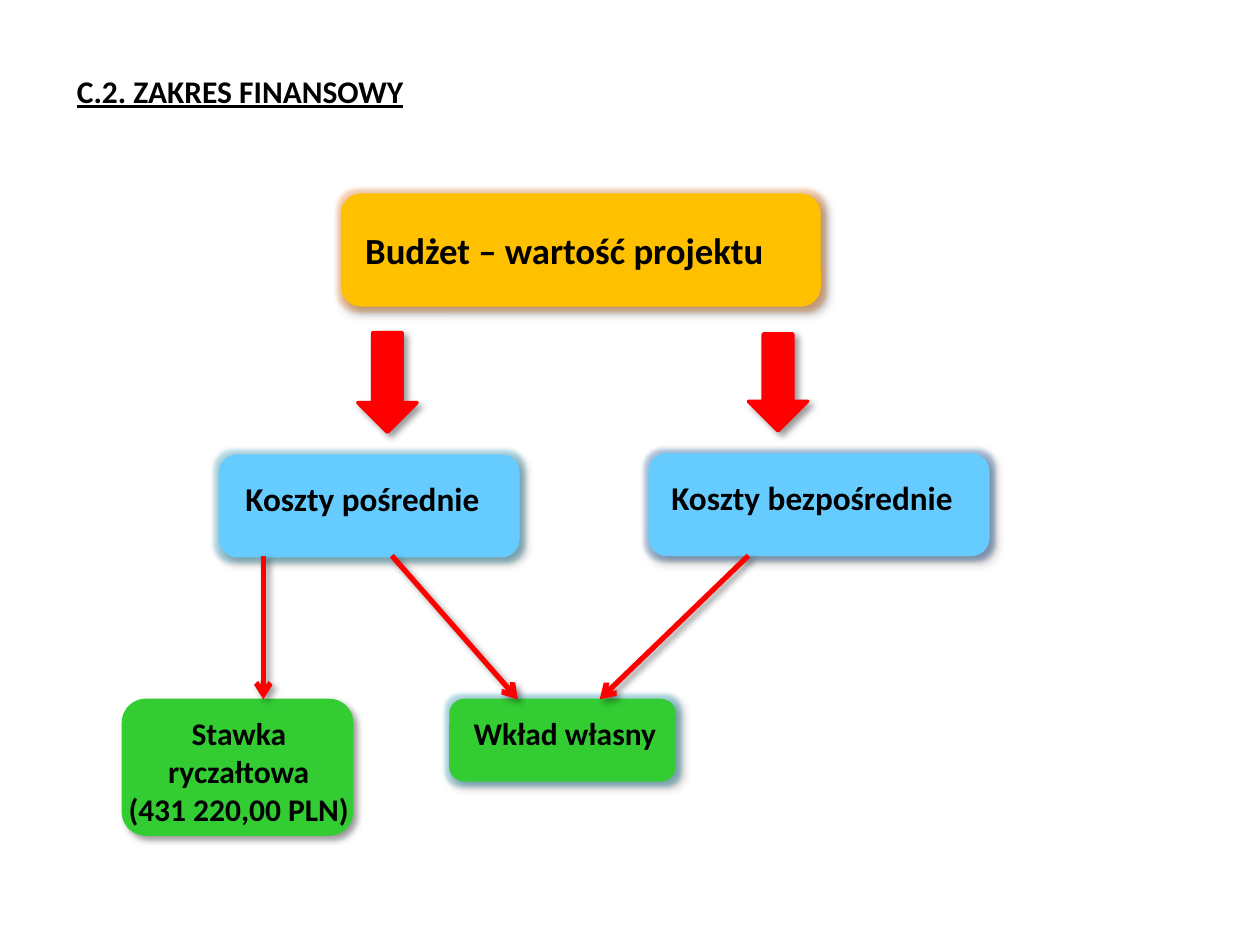
import dataclasses
import typing

import lxml.etree
import pptx
import pptx.dml.color
import pptx.enum.shapes
import pptx.enum.text
import pptx.oxml.ns
import pptx.util

RGBColor = pptx.dml.color.RGBColor
Shapes = pptx.enum.shapes.MSO_SHAPE
Align = pptx.enum.text.PP_ALIGN

BLACK = RGBColor(0, 0, 0)
AMBER = RGBColor(0xFF, 0xC0, 0x00)
SKY = RGBColor(0x66, 0xCC, 0xFF)
GREEN = RGBColor(0x33, 0xCC, 0x33)
RED = RGBColor(0xFF, 0, 0)
ORANGE_GLOW = RGBColor(0xF7, 0x96, 0x46)
TEAL_GLOW = RGBColor(0x4B, 0xAC, 0xC6)
BLUE_GLOW = RGBColor(0x4F, 0x81, 0xBD)

COLUMNS, ROWS = 100, 75
SLIDE_WIDTH, SLIDE_HEIGHT = pptx.util.Inches(10), pptx.util.Inches(7.5)


@dataclasses.dataclass(frozen=True)
class Area:
    column: float
    row: float
    columns: float
    rows: float

    def lengths(self) -> tuple[int, int, int, int]:
        return (across(self.column), down(self.row),
                across(self.columns), down(self.rows))


@dataclasses.dataclass(frozen=True)
class Block:
    kind: Shapes
    area: Area
    color: RGBColor
    glow: typing.Optional[RGBColor] = None


@dataclasses.dataclass(frozen=True)
class Arrow:
    start_column: float
    end_column: float


@dataclasses.dataclass(frozen=True)
class Label:
    area: Area
    lines: tuple[str, ...]
    size: int
    alignment: Align = Align.LEFT


BLOCKS = (
    Block(Shapes.ROUNDED_RECTANGLE, Area(27.2, 15.5, 37.8, 8.7), AMBER, ORANGE_GLOW),
    Block(Shapes.ROUNDED_RECTANGLE, Area(17.5, 36.2, 23.6, 7.9), SKY, TEAL_GLOW),
    Block(Shapes.ROUNDED_RECTANGLE, Area(51.6, 36.1, 26.8, 7.9), SKY, BLUE_GLOW),
    Block(Shapes.ROUNDED_RECTANGLE, Area(35.8, 55.6, 17.7, 6.3), GREEN, TEAL_GLOW),
    Block(Shapes.ROUNDED_RECTANGLE, Area(9.8, 55.6, 18.1, 10.6), GREEN),
    Block(Shapes.DOWN_ARROW, Area(28.4, 26.4, 4.7, 7.9), RED),
    Block(Shapes.DOWN_ARROW, Area(59.4, 26.5, 4.7, 7.7), RED),
)
ARROW_TOP, ARROW_BOTTOM = 44.1, 55.5
ARROWS = (Arrow(31.1, 41.1), Arrow(59.4, 47.6), Arrow(20.9, 20.9))
TITLE = Label(Area(5.1, 5.2, 28.2, 4), ("C.2. ZAKRES FINANSOWY",), 18)
LABELS = (
    Label(Area(28, 17.6, 36.2, 4.5), ("Budżet – wartość projektu",), 21),
    Label(Area(18.5, 37.5, 22, 4.2), ("Koszty pośrednie",), 19),
    Label(Area(52.3, 37.4, 25.2, 4.2), ("Koszty bezpośrednie",), 19),
    Label(Area(8.4, 56.2, 21.1, 10.1),
          ("Stawka ryczałtowa", "(431 220,00 PLN)"), 18, Align.CENTER),
    Label(Area(36.6, 56.2, 16.9, 4), ("Wkład własny",), 18),
)


def across(columns: float) -> int:
    return round(SLIDE_WIDTH * columns / COLUMNS)


def down(rows: float) -> int:
    return round(SLIDE_HEIGHT * rows / ROWS)


def add_element(parent, tag: str, **attributes: str):
    return lxml.etree.SubElement(parent, pptx.oxml.ns.qn(tag), attributes)


def add_color(parent, color: RGBColor) -> None:
    value = add_element(parent, "a:srgbClr", val=str(color))
    add_element(value, "a:alpha", val="40000")


def add_effects(properties, glow_color: typing.Optional[RGBColor] = None) -> None:
    effects = add_element(properties, "a:effectLst")
    if glow_color is not None:
        glow = add_element(effects, "a:glow", rad=str(pptx.util.Pt(5)))
        add_color(glow, glow_color)
    shadow = add_element(effects, "a:outerShdw", blurRad=str(pptx.util.Pt(4)),
                         dist=str(pptx.util.Pt(3)), dir=str(45 * 60000),
                         algn="tl", rotWithShape="0")
    add_color(shadow, BLACK)


def style_line(line, color: RGBColor, points: float) -> None:
    line.color.rgb = color
    line.width = pptx.util.Pt(points)


def draw_block(page, block: Block) -> None:
    box = page.shapes.add_shape(block.kind, *block.area.lengths())
    box.fill.solid()
    box.fill.fore_color.rgb = block.color
    style_line(box.line, block.color, 2)
    add_effects(box.element.spPr, block.glow)


def draw_arrow(page, arrow: Arrow) -> None:
    connector = page.shapes.add_connector(
        pptx.enum.shapes.MSO_CONNECTOR.STRAIGHT,
        across(arrow.start_column), down(ARROW_TOP),
        across(arrow.end_column), down(ARROW_BOTTOM))
    style_line(connector.line, RED, 3)
    add_element(connector.line._get_or_add_ln(), "a:tailEnd", type="arrow")
    add_effects(connector.element.spPr)


def write_label(box, label: Label, wrap: bool = True, underline: bool = False) -> None:
    frame = box.text_frame
    frame.text = "\n".join(label.lines)
    frame_format = {"word_wrap": wrap,
                    "vertical_anchor": pptx.enum.text.MSO_ANCHOR.TOP,
                    "auto_size": pptx.enum.text.MSO_AUTO_SIZE.SHAPE_TO_FIT_TEXT}
    for name, value in frame_format.items():
        setattr(frame, name, value)
    font_format = {"name": "Calibri", "size": pptx.util.Pt(label.size),
                   "bold": True, "underline": underline}
    for para in frame.paragraphs:
        para.alignment = label.alignment
        for span in para.runs:
            for name, value in font_format.items():
                setattr(span.font, name, value)
            span.font.color.rgb = BLACK


def place_title(page) -> None:
    title = page.shapes.title
    for name, value in zip(("left", "top", "width", "height"), TITLE.area.lengths()):
        setattr(title, name, value)
    write_label(title, TITLE, wrap=False, underline=True)


def main() -> None:
    deck = pptx.Presentation()
    deck.slide_width, deck.slide_height = SLIDE_WIDTH, SLIDE_HEIGHT
    page = deck.slides.add_slide(deck.slide_layouts.get_by_name("Title Only"))
    place_title(page)
    for block in BLOCKS:
        draw_block(page, block)
    for arrow in ARROWS:
        draw_arrow(page, arrow)
    for label in LABELS:
        write_label(page.shapes.add_textbox(*label.area.lengths()), label)
    deck.save("out.pptx")


if __name__ == "__main__":
    main()
